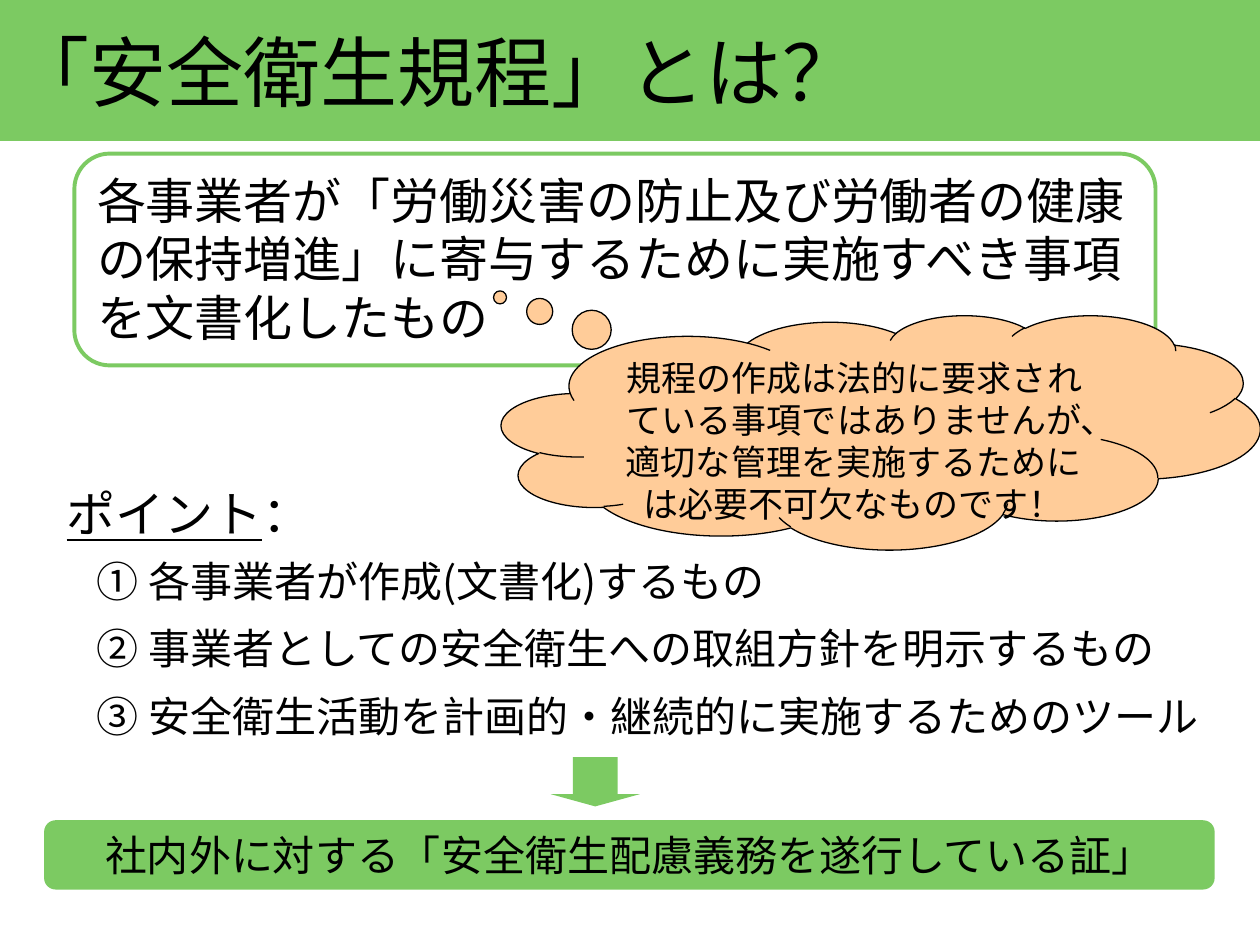
from lxml import etree
from pptx import Presentation
from pptx.dml.color import RGBColor
from pptx.enum.shapes import MSO_SHAPE
from pptx.enum.text import MSO_ANCHOR, PP_ALIGN
from pptx.oxml.ns import qn
from pptx.util import Pt

GREEN = RGBColor(0x7C, 0xCA, 0x62)
PEACH = RGBColor(0xFF, 0xCC, 0x99)
BLACK = RGBColor(0, 0, 0)
FONT = "Noto Sans CJK JP"
TOP, MIDDLE = MSO_ANCHOR.TOP, MSO_ANCHOR.MIDDLE
LEFT, CENTER = PP_ALIGN.LEFT, PP_ALIGN.CENTER

prs = Presentation()
prs.slide_width, prs.slide_height = Pt(720), Pt(540)
s = prs.slides.add_slide(prs.slide_layouts[6])


def add_shape(kind, box, fill=None, line=None, width=0.75):
    sp = s.shapes.add_shape(kind, *map(Pt, box))
    sp.shadow.inherit = False
    if fill is None:
        sp.fill.background()
    else:
        sp.fill.solid()
        sp.fill.fore_color.rgb = fill
    if line is None:
        sp.line.fill.background()
    else:
        sp.line.color.rgb = line
        sp.line.width = Pt(width)
    return sp


def write(sp, runs, size, align=LEFT, anchor=TOP, wrap=True):
    tf = sp.text_frame
    tf.word_wrap = wrap
    tf.vertical_anchor = anchor
    p = tf.paragraphs[0]
    p.alignment = align
    if anchor == TOP:
        p.line_spacing = Pt(size * 1.2)
    p.font.size = Pt(size)
    p.font.color.rgb = BLACK
    p.font.name = FONT
    for text, underline in runs:
        r = p.add_run()
        r.text = text
        if underline:
            r.font.underline = True
        # The text is Japanese, so the East Asian font and colour count
        r.font.size = Pt(size)
        r.font.color.rgb = BLACK
        r.font.name = FONT
        latin = r.font._element.find(qn("a:latin"))
        ea = etree.Element(qn("a:ea"), typeface=FONT)
        latin.addnext(ea)


# Definition box
sp = add_shape(MSO_SHAPE.ROUNDED_RECTANGLE, (42.5, 87.8, 617.8, 121), line=GREEN, width=2.25)
write(sp, [("各事業者が「労働災害の防止及び労働者の健康の保持増進」に寄与するために"
            "実施すべき事項を文書化したもの", False)], 28)

# Points
sp = s.shapes.add_textbox(Pt(31), Pt(272.9), Pt(158.4), Pt(41))
write(sp, [("ポイント", True), ("：", False)], 28)

points = [
    "① 各事業者が作成(文書化)するもの",
    "② 事業者としての安全衛生への取組方針を明示するもの",
    "③ 安全衛生活動を計画的・継続的に実施するためのツール",
]
for i, text in enumerate(points):
    sp = s.shapes.add_textbox(Pt(48.2), Pt(313.9 + 38.5 * i), Pt(658), Pt(36))
    write(sp, [(text, False)], 24)

# Thought cloud
sp = add_shape(MSO_SHAPE.CLOUD_CALLOUT, (286.6, 180, 433.4, 133.9), PEACH, BLACK)
sp.adjustments[0], sp.adjustments[1] = -0.502, -0.575
write(sp, [("規程の作成は法的に要求されている事項ではありませんが、"
            "適切な管理を実施するためには必要不可欠なものです！", False)], 20, CENTER)

# Conclusion and the arrow to it
sp = add_shape(MSO_SHAPE.ROUNDED_RECTANGLE, (25.2, 468.7, 668.9, 39.6), GREEN)
write(sp, [("社内外に対する「安全衛生配慮義務を遂行している証」", False)],
      24, CENTER, MIDDLE, wrap=False)
sp = add_shape(MSO_SHAPE.DOWN_ARROW, (314.6, 432.7, 51.1, 28.1), GREEN)
sp.adjustments[0], sp.adjustments[1] = 0.5, 0.25

# Title band
sp = add_shape(MSO_SHAPE.RECTANGLE, (0, 0, 720, 80.6), GREEN)
write(sp, [("「安全衛生規程」とは？", False)], 44, anchor=MIDDLE)

prs.save("out.pptx")
